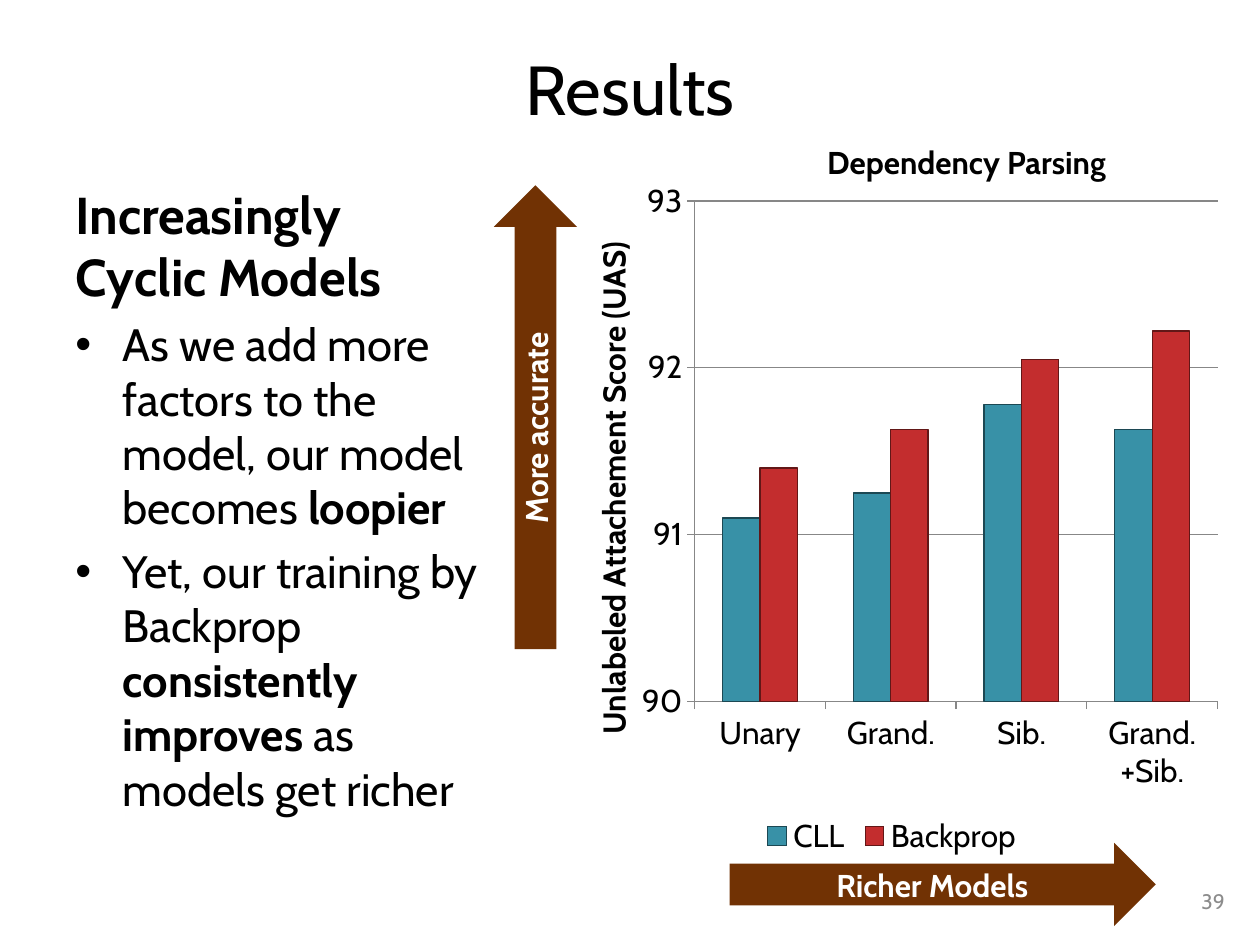
from lxml import etree
from pptx import Presentation
from pptx.chart.data import CategoryChartData
from pptx.dml.color import RGBColor as RGB
from pptx.enum.chart import XL_CHART_TYPE as Kind, XL_LEGEND_POSITION as Spot, XL_TICK_MARK as Tick
from pptx.enum.shapes import MSO_SHAPE as Shape
from pptx.enum.text import MSO_ANCHOR as Anchor, PP_ALIGN as Align
from pptx.oxml import parse_xml
from pptx.oxml.ns import nsdecls, qn
from pptx.util import Cm, Pt

FONT = "Cabin"
HUES = {"text": "000000", "white": "FFFFFF", "page": "8C8C8C", "arrow": "713204",
        "grid": "878787", "teal": "3891A7", "teal_edge": "1C4853",
        "red": "C32D2E", "red_edge": "621717"}


def hue(name):
    return RGB.from_string(HUES[name])


def write(frame, runs, size=18, color="text", align=Align.CENTER,
          anchor=Anchor.MIDDLE, new=False, bullet=False, before=0):
    """Write one paragraph of (text, bold) runs; new adds it after the others."""
    frame.word_wrap = True
    frame.vertical_anchor = anchor
    para = frame.add_paragraph() if new else frame.paragraphs[0]
    if bullet:
        props = para._p.get_or_add_pPr()
        props.set("marL", str(Cm(0.95)))
        props.set("indent", str(Cm(-0.95)))
        font = etree.SubElement(props, qn("a:buFont"))
        font.set("typeface", "Arial")
        etree.SubElement(props, qn("a:buChar")).set("char", "•")
    para.alignment = align
    para.space_before = Pt(before)
    for text, bold in runs:
        run = para.add_run()
        run.text = text
        run.font.name, run.font.size, run.font.bold = FONT, Pt(size), bold
        run.font.color.rgb = hue(color)


deck = Presentation()
deck.slide_width, deck.slide_height = Cm(25.4), Cm(19.05)
slide = deck.slides.add_slide(deck.slide_layouts[5])
shapes = slide.shapes

# Title
title = shapes.title
title.left, title.top, title.width, title.height = Cm(1.27), Cm(0.76), Cm(22.86), Cm(2.01)
write(title.text_frame, [("Results", False)], size=39.6)

# Body
body = shapes.add_textbox(Cm(1.27), Cm(3.35), Cm(8.69), Cm(14.02)).text_frame
body.margin_top = Cm(0.34)
write(body, [("Increasingly Cyclic Models", True)], size=29.6,
      align=Align.LEFT, anchor=Anchor.TOP)
points = [
    [("As we add more factors to the model, our model becomes ", False), ("loopier", True)],
    [("Yet, our training by Backprop ", False), ("consistently improves ", True),
     ("as models get richer", False)],
]
for point in points:
    write(body, point, size=25.9, align=Align.LEFT, anchor=Anchor.TOP,
          new=True, bullet=True, before=5.2)

# Chart
data = CategoryChartData()
data.categories = ["Unary", "Grand.", "Sib.", "Grand.+Sib."]
data.add_series("CLL", [91.1, 91.25, 91.78, 91.63])
data.add_series("Backprop", [91.4, 91.63, 92.05, 92.22])
chart = shapes.add_chart(Kind.COLUMN_CLUSTERED, Cm(11.13), Cm(3.35),
                         Cm(13.69), Cm(14.02), data).chart
chart.has_title = False
chart.font.name, chart.font.size = FONT, Pt(18)
chart.font.color.rgb = hue("text")
chart.has_legend = True
chart.legend.position = Spot.BOTTOM
chart.legend.include_in_layout = False

plot = chart.plots[0]
plot.vary_by_categories = False
plot.gap_width, plot.overlap = 150, 0
for bars, name in zip(plot.series, ["teal", "red"]):
    bars.format.fill.solid()
    bars.format.fill.fore_color.rgb = hue(name)
    bars.format.line.color.rgb = hue(name + "_edge")
    bars.format.line.width = Pt(0.75)

score = chart.value_axis
score.minimum_scale, score.maximum_scale, score.major_unit = 90, 93, 1
score.tick_labels.number_format = "General"
score.tick_labels.number_format_is_linked = False
score.has_major_gridlines = True
for axis in (score, chart.category_axis):
    axis.major_tick_mark = Tick.OUTSIDE
    axis.format.line.color.rgb = hue("grid")
score.major_gridlines.format.line.color.rgb = hue("grid")
label = score.axis_title
run = label.text_frame.paragraphs[0].add_run()
run.text = "Unlabeled Attachement Score (UAS)"
run.font.name, run.font.size, run.font.bold = FONT, Pt(18), True
run.font.color.rgb = hue("text")
label.text_frame._txBody.find(qn("a:bodyPr")).set("rot", "-5400000")

# Fixed places of the plot and the axis title, as shares of the chart
places = [(chart._chartSpace.chart.plotArea, 0, {"x": 0.21, "y": 0.05, "w": 0.77, "h": 0.72}),
          (label._element, 1, {"x": 0.05, "y": 0.1})]
for node, index, place in places:
    for old in node.findall(qn("c:layout")):
        node.remove(old)
    inner = '<c:layoutTarget val="inner"/>' if "w" in place else ""
    modes = "".join(f'<c:{key}Mode val="edge"/>' for key in "xy")
    sizes = "".join(f'<c:{key} val="{val}"/>' for key, val in place.items())
    node.insert(index, parse_xml(
        f'<c:layout {nsdecls("c")}><c:manualLayout>{inner}{modes}{sizes}'
        '</c:manualLayout></c:layout>'))

# Arrows
arrows = [("Richer Models", 14.71, 16.99, 8.59, 0),
          ("More accurate", 6.12, 7.57, 9.35, 270)]
for text, left, top, width, turn in arrows:
    arrow = shapes.add_shape(Shape.RIGHT_ARROW, Cm(left), Cm(top), Cm(width), Cm(1.68))
    arrow.rotation = turn
    arrow.shadow.inherit = False
    arrow.fill.solid()
    arrow.fill.fore_color.rgb = hue("arrow")
    arrow.line.fill.background()
    write(arrow.text_frame, [(text, True)], color="white")

# Chart heading and page number
head = shapes.add_textbox(Cm(14.71), Cm(2.77), Cm(9.55), Cm(0.97))
write(head.text_frame, [("Dependency Parsing", True)])
page = shapes.add_textbox(Cm(22.53), Cm(17.65), Cm(2.41), Cm(1.02))
write(page.text_frame, [("39", False)], size=12, color="page", align=Align.RIGHT)

deck.save("out.pptx")
